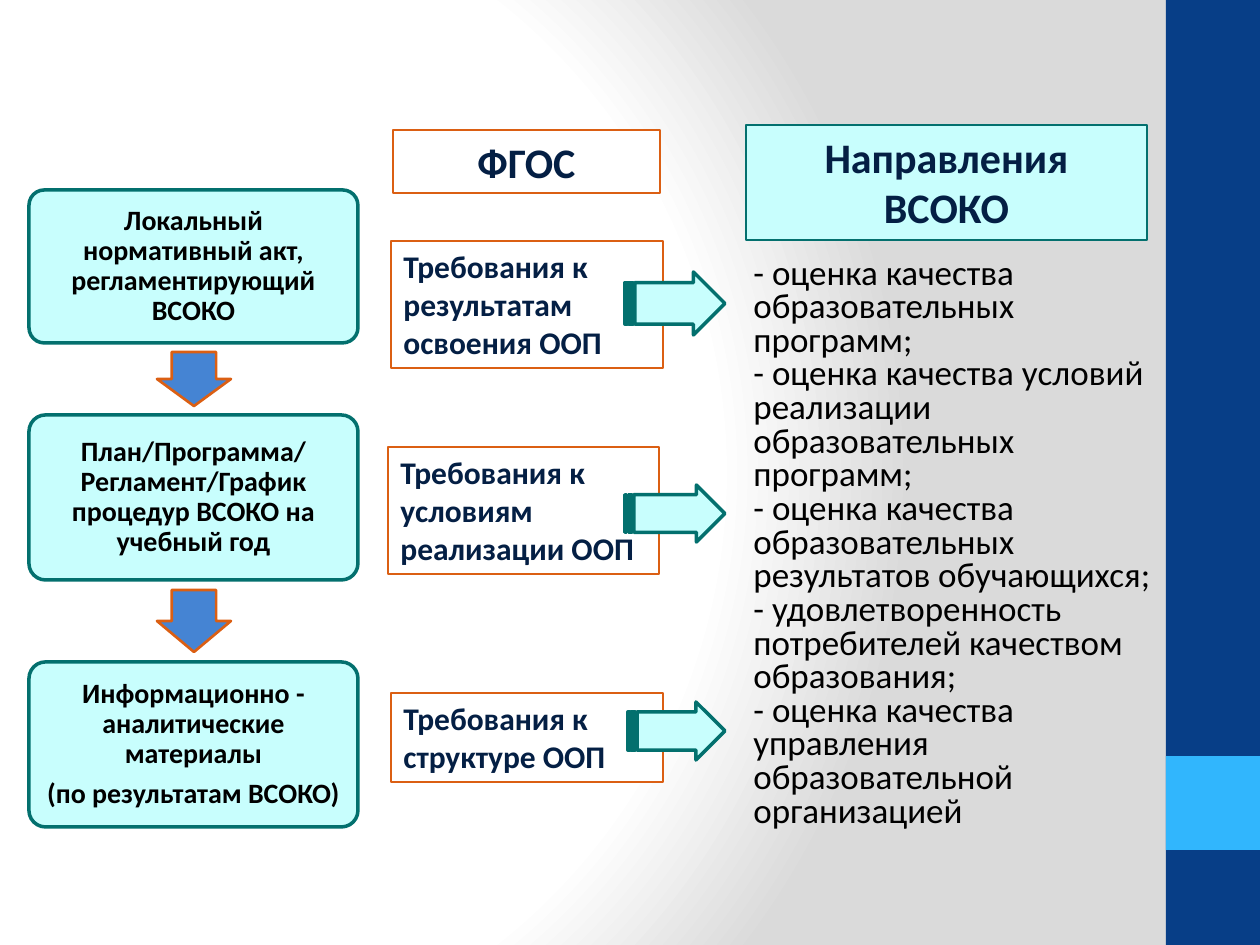
from pptx import Presentation
from pptx.dml.color import RGBColor
from pptx.enum.shapes import MSO_SHAPE
from pptx.enum.text import MSO_ANCHOR, PP_ALIGN
from pptx.oxml import parse_xml
from pptx.oxml.ns import nsdecls
from pptx.util import Emu, Pt

EMU_PER_PX = 914400 / 126
FONT = "Calibri"

WHITE = RGBColor(0xFF, 0xFF, 0xFF)
BLACK = RGBColor(0x00, 0x00, 0x00)
NAVY = RGBColor(0x04, 0x1F, 0x44)
BAND_BLUE = RGBColor(0x07, 0x3E, 0x87)
SKY = RGBColor(0x31, 0xB6, 0xFD)
STEP_BLUE = RGBColor(0x45, 0x84, 0xD3)
AQUA = RGBColor(0xC8, 0xFE, 0xFD)
TEAL = RGBColor(0x03, 0x70, 0x6E)
ORANGE = RGBColor(0xDB, 0x5F, 0x13)

# Each stage: top, height, paragraphs
STAGES = [
    (190, 153, ["Локальный нормативный акт, регламентирующий ВСОКО"]),
    (415, 165, ["План/Программа/Регламент/График процедур ВСОКО на учебный год"]),
    (662, 165, ["Информационно - аналитические материалы", "(по результатам ВСОКО)"]),
]
# Each step arrow between stages: top, height
STEPS = [(352, 54), (590, 62)]
# Each requirement: left, top, width, height, text
REQUIREMENTS = [
    (391, 241, 272, 127, "Требования к результатам освоения ООП"),
    (388, 447, 271, 127, "Требования к условиям реализации ООП"),
    (391, 693, 272, 89, "Требования к структуре ООП"),
]
# Each arrow to the directions: left, top, height
LINKS = [(625, 272, 63), (625, 485, 57), (628, 702, 58)]
LINKS_RIGHT = 725
DIRECTIONS = [
    "- оценка качества образовательных программ;",
    "- оценка качества условий реализации образовательных программ;",
    "- оценка качества образовательных результатов обучающихся;",
    "- удовлетворенность потребителей качеством образования;",
    "- оценка качества управления образовательной организацией",
]


def px(length):
    return Emu(round(length * EMU_PER_PX))


def set_background(slide):
    """Radial fade from white to grey."""
    stops = "".join(
        f'<a:gs pos="{pos}000"><a:srgbClr val="{color}"/></a:gs>'
        for pos, color in [(0, "FFFFFF"), (75, "FFFFFF"), (100, "DADADA")]
    )
    background = parse_xml(
        f'<p:bg {nsdecls("p", "a")}><p:bgPr><a:gradFill rotWithShape="1">'
        f'<a:gsLst>{stops}</a:gsLst><a:path path="circle">'
        '<a:fillToRect l="20000" t="50000" r="100000" b="50000"/></a:path>'
        "</a:gradFill><a:effectLst/></p:bgPr></p:bg>"
    )
    slide.element.cSld.insert(0, background)


def add_block(slide, preset, box, fill, line=None, line_width=0.75, adjustments=()):
    block = slide.shapes.add_shape(preset, *map(px, box))
    block.shadow.inherit = False
    block.fill.solid()
    block.fill.fore_color.rgb = fill
    if line is None:
        block.line.fill.background()
    else:
        block.line.color.rgb = line
        block.line.width = Pt(line_width)
    for index, value in enumerate(adjustments):
        block.adjustments[index] = value
    return block


def write(shape, lines, size, color, bold=True, align=PP_ALIGN.LEFT,
          anchor=MSO_ANCHOR.TOP, spacing=None, after=None):
    frame = shape.text_frame
    frame.word_wrap = True
    frame.vertical_anchor = anchor
    frame.text = "\n".join(lines)
    for paragraph in frame.paragraphs:
        paragraph.alignment = align
        paragraph.line_spacing = spacing
        paragraph.space_after = after
        font = paragraph.font
        font.name, font.size, font.bold = FONT, Pt(size), bold
        font.color.rgb = color


def add_stage(slide, top, height, lines):
    stage = add_block(slide, MSO_SHAPE.ROUNDED_RECTANGLE, (29, top, 329, height),
                      AQUA, TEAL, 2, [0.1])
    frame = stage.text_frame
    frame.margin_left = frame.margin_right = px(9)
    frame.margin_top = frame.margin_bottom = px(9)
    write(stage, lines, 16, BLACK, align=PP_ALIGN.CENTER,
          anchor=MSO_ANCHOR.MIDDLE, spacing=0.9, after=Pt(5.6))


def add_heading(slide, box, text, fill, line):
    heading = add_block(slide, MSO_SHAPE.RECTANGLE, box, fill, line)
    write(heading, [text], 24, NAVY, align=PP_ALIGN.CENTER)


def main():
    prs = Presentation()
    prs.slide_width, prs.slide_height = px(1260), px(945)
    slide = prs.slides.add_slide(prs.slide_layouts[6])

    # Background and side band
    set_background(slide)
    add_block(slide, MSO_SHAPE.RECTANGLE, (1166, 0, 94, 945), BAND_BLUE)
    add_block(slide, MSO_SHAPE.RECTANGLE, (1166, 756, 94, 94), SKY)

    # Left column: document stages
    for stage in STAGES:
        add_stage(slide, *stage)
    for top, height in STEPS:
        add_block(slide, MSO_SHAPE.DOWN_ARROW, (157, top, 74, height),
                  STEP_BLUE, ORANGE, 1.5, [0.6, 0.5])

    # Middle column: standard requirements
    add_heading(slide, (393, 130, 267, 63), "ФГОС", WHITE, ORANGE)
    for *box, text in REQUIREMENTS:
        requirement = add_block(slide, MSO_SHAPE.RECTANGLE, box, WHITE, ORANGE)
        write(requirement, [text], 18, NAVY)

    # Right column: assessment directions
    add_heading(slide, (746, 125, 401, 115), "Направления ВСОКО", AQUA, TEAL)
    for left, top, height in LINKS:
        add_block(slide, MSO_SHAPE.STRIPED_RIGHT_ARROW,
                  (left, top, LINKS_RIGHT - left, height),
                  AQUA, TEAL, 2, [0.66, 0.5])
    directions = slide.shapes.add_textbox(*map(px, (741, 252, 431, 591)))
    write(directions, DIRECTIONS, 20, BLACK, bold=False, spacing=0.8)

    prs.save("out.pptx")


if __name__ == "__main__":
    main()
